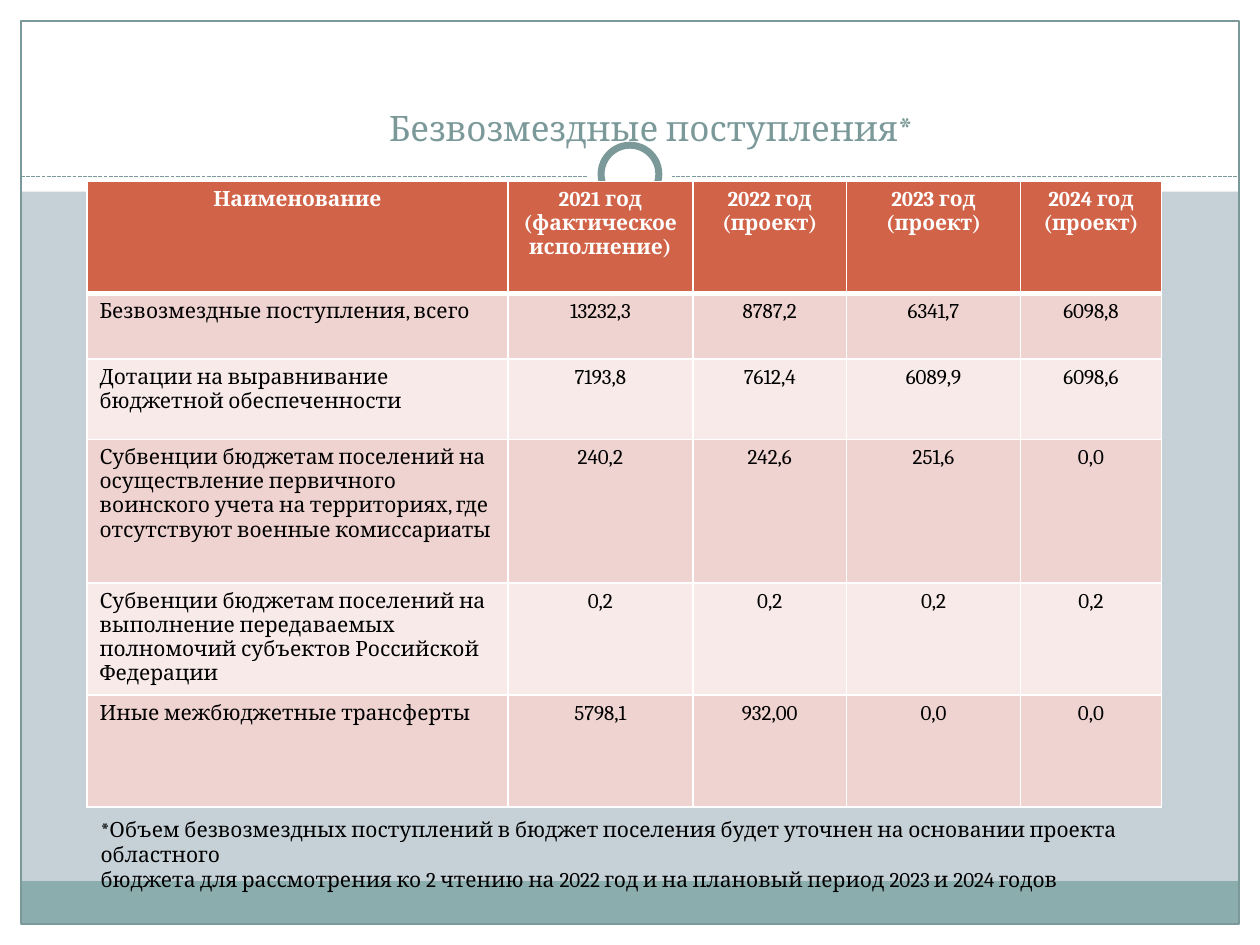
from lxml import etree
from pptx import Presentation
from pptx.dml.color import RGBColor
from pptx.enum.dml import MSO_LINE
from pptx.enum.shapes import MSO_CONNECTOR, MSO_SHAPE
from pptx.enum.text import MSO_ANCHOR, PP_ALIGN
from pptx.oxml.ns import qn
from pptx.util import Pt

RECT, OVAL = MSO_SHAPE.RECTANGLE, MSO_SHAPE.OVAL
LEFT, CENTER = PP_ALIGN.LEFT, PP_ALIGN.CENTER
FONT = "Cambria"
WHITE, BLACK, SLATE = "FFFFFF", "000000", "7C999A"
BACKGROUND, BAND = "C5D1D7", "8CADAE"
HEADER_FILL, ROW_FILLS = "D16349", ("EED3D0", "F7EAE9")

SLIDE_W, SLIDE_H, MARGIN = 720, 540, 12
HEADER_H, DIVIDER_Y = 109.5, 100.8
COLUMN_WIDTHS = (240.5, 105.8, 87.8, 99.4, 80.6)
ROW_HEIGHTS = (64, 37.5, 46, 82, 64, 64)

TITLE = "Безвозмездные поступления*"
TABLE_ROWS = (
    ("Наименование", "2021 год (фактическое исполнение)", "2022 год (проект)",
     "2023 год (проект)", "2024 год (проект)"),
    ("Безвозмездные поступления, всего", "13232,3", "8787,2", "6341,7", "6098,8"),
    ("Дотации на выравнивание бюджетной обеспеченности",
     "7193,8", "7612,4", "6089,9", "6098,6"),
    ("Субвенции бюджетам поселений на осуществление первичного воинского учета "
     "на территориях, где отсутствуют военные комиссариаты",
     "240,2", "242,6", "251,6", "0,0"),
    ("Субвенции бюджетам поселений на выполнение передаваемых полномочий "
     "субъектов Российской Федерации", "0,2", "0,2", "0,2", "0,2"),
    ("Иные межбюджетные трансферты", "5798,1", "932,00", "0,0", "0,0"),
)
FOOTNOTE = (
    "*Объем безвозмездных поступлений в бюджет поселения будет уточнен "
    "на основании проекта областного",
    "бюджета для рассмотрения ко 2 чтению на 2022 год и на плановый период "
    "2023 и 2024 годов",
)


def color(value):
    return RGBColor.from_string(value)


def format_text(paragraph, size, text_color, align=LEFT, bold=False):
    paragraph.alignment = align
    font = paragraph.font
    font.name, font.size, font.bold = FONT, Pt(size), bold
    font.color.rgb = color(text_color)


def add_panel(slide, kind, box, fill=None, line=None, line_width=0.75):
    panel = slide.shapes.add_shape(kind, *map(Pt, box))
    panel.shadow.inherit = False
    if fill:
        panel.fill.solid()
        panel.fill.fore_color.rgb = color(fill)
    else:
        panel.fill.background()
    if line:
        panel.line.color.rgb = color(line)
        panel.line.width = Pt(line_width)
    else:
        panel.line.fill.background()


def add_divider(slide, y):
    divider = slide.shapes.add_connector(
        MSO_CONNECTOR.STRAIGHT, Pt(MARGIN), Pt(y), Pt(SLIDE_W - MARGIN), Pt(y))
    divider.line.color.rgb = color(SLATE)
    divider.line.width = Pt(0.75)
    divider.line.dash_style = MSO_LINE.SQUARE_DOT
    etree.SubElement(divider._element.spPr, qn("a:effectLst"))


def add_frame(slide):
    right, bottom = SLIDE_W - MARGIN, SLIDE_H - MARGIN
    inner_w = SLIDE_W - 2 * MARGIN
    # White margins and header
    for box in ((0, bottom, SLIDE_W, MARGIN), (0, 0, SLIDE_W, HEADER_H),
                (0, 0, MARGIN, SLIDE_H), (right, 0, MARGIN, SLIDE_H)):
        add_panel(slide, RECT, box, WHITE)
    # Bottom band and outline
    add_panel(slide, RECT, (MARGIN, 503.5, inner_w, bottom - 503.5), BAND)
    add_panel(slide, RECT, (MARGIN, MARGIN, inner_w, bottom - MARGIN), line=SLATE)
    # Divider with a ring in the middle
    add_divider(slide, DIVIDER_Y)
    for size, outline in ((48, None), (33, SLATE)):
        box = ((SLIDE_W - size) / 2, 99.5 - size / 2, size, size)
        add_panel(slide, OVAL, box, WHITE, outline, 4)


def add_title(slide):
    title = slide.shapes.title
    slide.shapes._spTree.append(title._element)  # bring in front of the frame
    title.left, title.top, title.width, title.height = map(Pt, (105, 54.7, 534, 34))
    title.text_frame.text = TITLE
    title.text_frame.vertical_anchor = MSO_ANCHOR.BOTTOM
    format_text(title.text_frame.paragraphs[0], 20, SLATE, CENTER)


def set_borders(cell, top, bottom):
    properties = cell._tc.get_or_add_tcPr()
    for side, width in (("L", 1), ("R", 1), ("T", top), ("B", bottom)):
        border = etree.SubElement(properties, qn(f"a:ln{side}"), w=str(Pt(width)))
        fill = etree.SubElement(border, qn("a:solidFill"))
        etree.SubElement(fill, qn("a:srgbClr"), val=WHITE)


def add_budget_table(slide):
    table = slide.shapes.add_table(
        len(ROW_HEIGHTS), len(COLUMN_WIDTHS), Pt(49.7), Pt(103.7),
        Pt(sum(COLUMN_WIDTHS)), Pt(sum(ROW_HEIGHTS))).table
    for column, width in zip(table.columns, COLUMN_WIDTHS):
        column.width = Pt(width)
    for r, (values, height) in enumerate(zip(TABLE_ROWS, ROW_HEIGHTS)):
        table.rows[r].height = Pt(height)
        header = r == 0
        for c, value in enumerate(values):
            cell = table.cell(r, c)
            cell.text = value
            format_text(cell.text_frame.paragraphs[0], 12,
                        WHITE if header else BLACK,
                        CENTER if header or c else LEFT, header)
            set_borders(cell, top=3 if r == 1 else 1, bottom=3 if header else 1)
            cell.fill.solid()
            cell.fill.fore_color.rgb = color(
                HEADER_FILL if header else ROW_FILLS[(r - 1) % 2])


def add_footnote(slide):
    frame = slide.shapes.add_textbox(*map(Pt, (50.4, 463, 623.5, 36))).text_frame
    frame.word_wrap = True
    frame.text = "\n".join(FOOTNOTE)
    for paragraph in frame.paragraphs:
        format_text(paragraph, 12, BLACK)


def main():
    deck = Presentation()
    deck.slide_width, deck.slide_height = Pt(SLIDE_W), Pt(SLIDE_H)
    slide = deck.slides.add_slide(deck.slide_layouts[5])
    slide.background.fill.solid()
    slide.background.fill.fore_color.rgb = color(BACKGROUND)
    add_frame(slide)
    add_title(slide)
    add_budget_table(slide)
    add_footnote(slide)
    deck.save("out.pptx")


if __name__ == "__main__":
    main()
